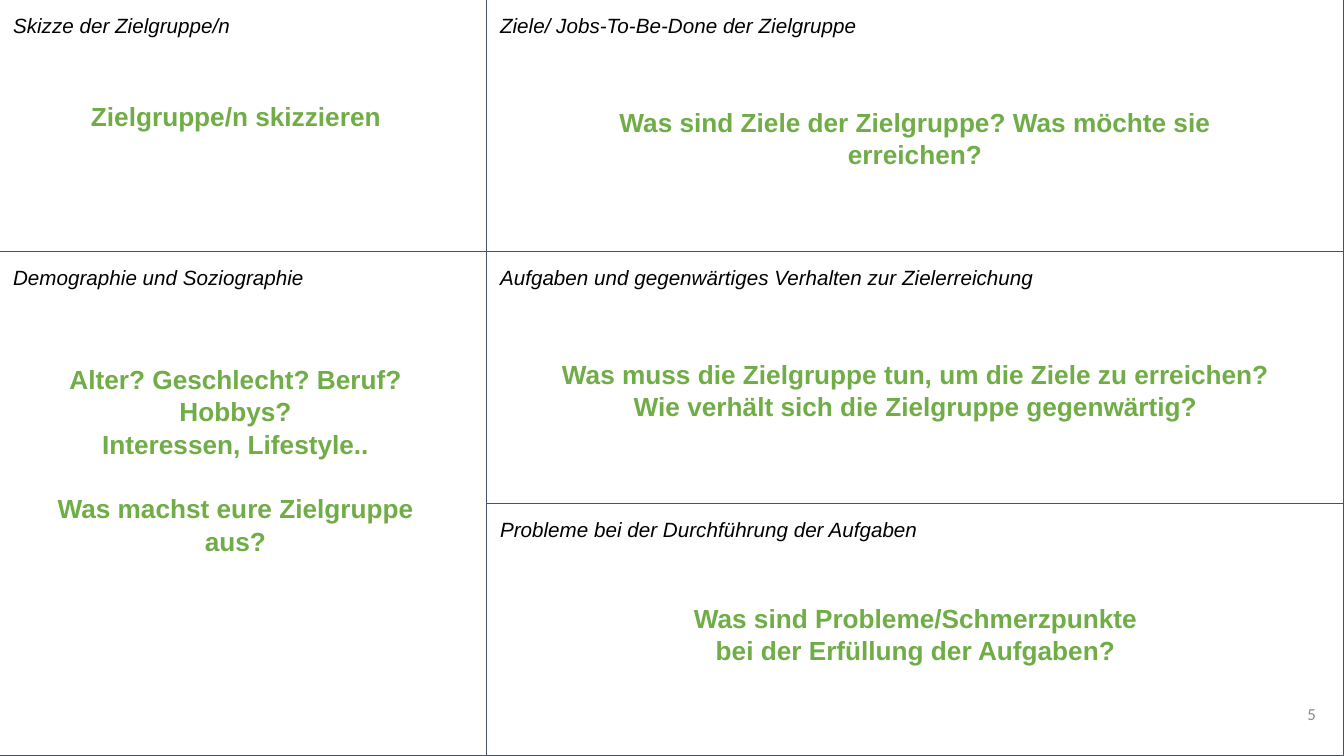
from pptx import Presentation
from pptx.dml.color import RGBColor
from pptx.enum.shapes import MSO_SHAPE
from pptx.enum.text import MSO_ANCHOR, PP_ALIGN
from pptx.util import Inches, Pt

RECT = MSO_SHAPE.RECTANGLE
TOP, MIDDLE = MSO_ANCHOR.TOP, MSO_ANCHOR.MIDDLE
LEFT, CENTER, RIGHT = PP_ALIGN.LEFT, PP_ALIGN.CENTER, PP_ALIGN.RIGHT

# Content: columns of (heading, height in rows)
COLUMNS = [
    [("Skizze der Zielgruppe/n", 1),
     ("Demographie und Soziographie", 2)],
    [("Ziele/ Jobs-To-Be-Done der Zielgruppe", 1),
     ("Aufgaben und gegenwärtiges Verhalten zur Zielerreichung", 1),
     ("Probleme bei der Durchführung der Aufgaben", 1)],
]
# Prompts: (left, top, width, height), lines
PROMPTS = [
    ((6.01, 0.99, 6.13, 1.01),
     ["Was sind Ziele der Zielgruppe? Was möchte sie erreichen?"]),
    ((5.38, 3.49, 7.4, 1.01),
     ["Was muss die Zielgruppe tun, um die Ziele zu erreichen?",
      "Wie verhält sich die Zielgruppe gegenwärtig?"]),
    ((5.86, 5.91, 6.44, 1.01),
     ["Was sind Probleme/Schmerzpunkte",
      "bei der Erfüllung der Aufgaben?"]),
    ((0.34, 3.54, 3.99, 1.92),
     ["Alter? Geschlecht? Beruf? Hobbys?",
      "Interessen, Lifestyle..",
      "Was machst eure Zielgruppe aus?"]),
    ((0.57, 0.93, 3.54, 1.01), ["Zielgruppe/n skizzieren"]),
]
PAGE_NUMBER = "5"

# Formats
HEADING = {"name": "Arial", "size": Pt(14.7), "italic": True}
PROMPT = {"name": "Arial", "size": Pt(18.7), "bold": True}
NUMBER = {"name": "Calibri", "size": Pt(12)}
SLIDE_W, SLIDE_H = 13.33, 7.5
SPLIT = 4.83
ROW_H = SLIDE_H / 3
PROMPT_GAP = Pt(22.4)


def rgb(value):
    return RGBColor.from_string(value)


def write(sp, lines, fmt, color, align, insets, anchor=TOP, spacing=None):
    tf = sp.text_frame
    tf.word_wrap = True
    tf.vertical_anchor = anchor
    tf.margin_left = tf.margin_right = Inches(insets[0])
    tf.margin_top = tf.margin_bottom = Inches(insets[1])
    for i, line in enumerate(lines):
        p = tf.paragraphs[0] if i == 0 else tf.add_paragraph()
        p.alignment = align
        p.line_spacing = spacing
        r = p.add_run()
        r.text = line
        for key, value in fmt.items():
            setattr(r.font, key, value)
        r.font.color.rgb = rgb(color)
    return tf


prs = Presentation()
prs.slide_width, prs.slide_height = Inches(SLIDE_W), Inches(SLIDE_H)
s = prs.slides.add_slide(prs.slide_layouts[6])

# Canvas fields
edges = [0, SPLIT, SLIDE_W]
for left, right, fields in zip(edges, edges[1:], COLUMNS):
    top = 0
    for heading, rows in fields:
        height = rows * ROW_H
        sp = s.shapes.add_shape(RECT, Inches(left), Inches(top),
                                Inches(right - left), Inches(height))
        sp.shadow.inherit = False
        sp.fill.solid()
        sp.fill.fore_color.rgb = rgb("FFFFFF")
        sp.line.color.rgb = rgb("44546A")
        sp.line.width = Pt(0.75)
        write(sp, [heading], HEADING, "000000", LEFT, (0.13, 0.13))
        top += height

# Green prompts
for box, lines in PROMPTS:
    sp = s.shapes.add_textbox(*map(Inches, box))
    tf = write(sp, lines, PROMPT, "70AD47", CENTER, (0.1, 0.05), spacing=1.04)
    if len(lines) > 2:
        tf.paragraphs[-1].space_before = PROMPT_GAP

# Page number
sp = s.shapes.add_textbox(Inches(12.35), Inches(6.8), Inches(0.8), Inches(0.57))
write(sp, [PAGE_NUMBER], NUMBER, "888888", RIGHT, (0.1, 0.1), MIDDLE)

prs.save("out.pptx")
